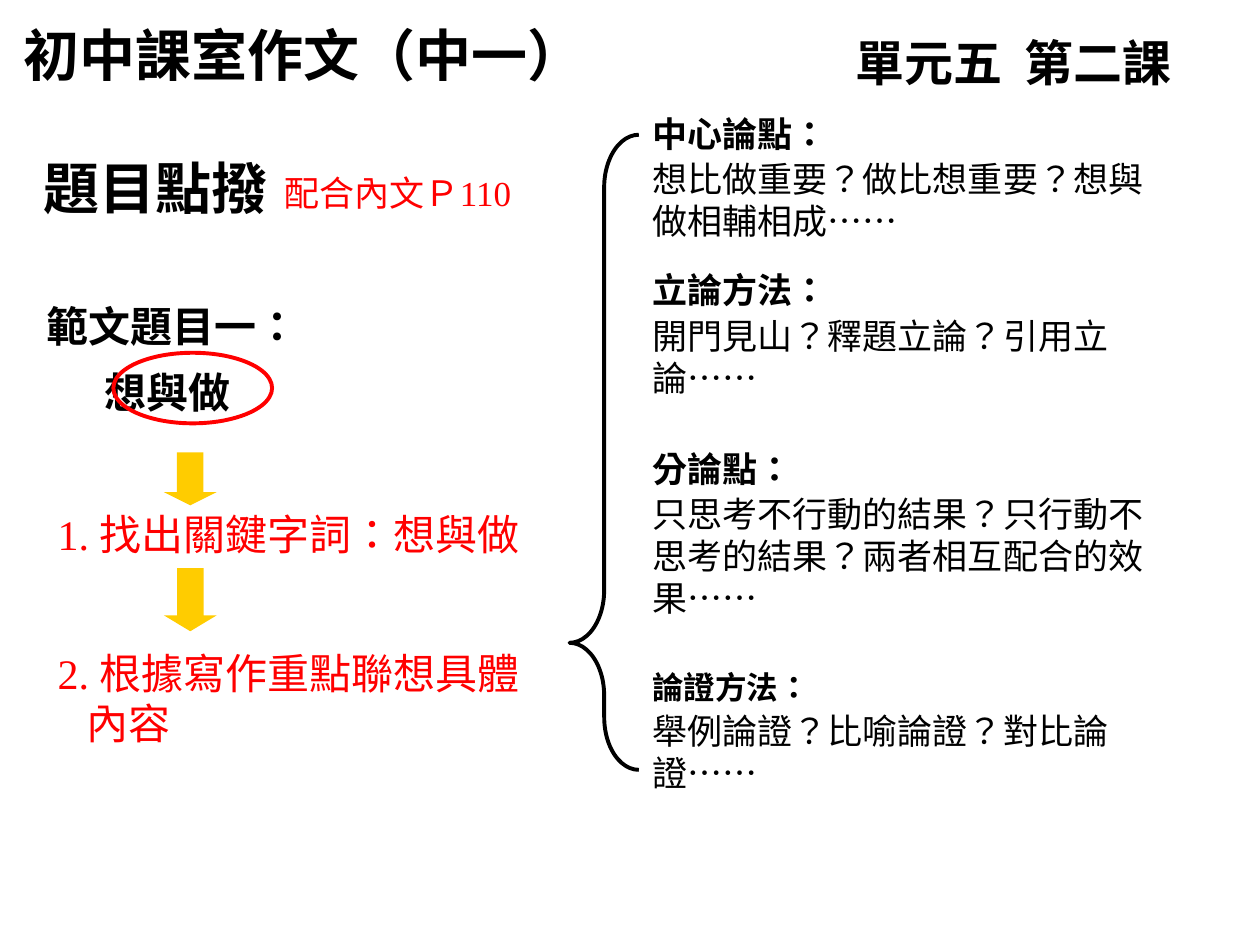
import pptx
import pptx.dml.color
import pptx.enum.lang
import pptx.enum.shapes
import pptx.util

SHAPE = pptx.enum.shapes.MSO_SHAPE
BLACK, RED, GOLD = "000000", "FF0000", "FFCC00"
SANS, SERIF, CJK = "DejaVu Sans", "Times New Roman", "Noto Sans CJK SC"


def color(value):
    return pptx.dml.color.RGBColor.from_string(value)


class Lesson:
    """Draw styled elements on one slide, placed in percent of its size."""

    def __init__(self, prs):
        self.width, self.height = prs.slide_width, prs.slide_height
        self.s = prs.slides.add_slide(prs.slide_layouts[6])

    def place(self, x, y, w, h):
        across, down = self.width / 100, self.height / 100
        return int(x * across), int(y * down), int(w * across), int(h * down)

    def box(self, *area):
        tf = self.s.shapes.add_textbox(*self.place(*area)).text_frame
        tf.word_wrap = True
        return tf

    def paragraph(self, tf, runs, size, ink=BLACK, bold=False, before=0, indent=0, spacing=1.0):
        p = tf.paragraphs[0]
        if p.runs:
            p = tf.add_paragraph()
        p.space_before = pptx.util.Pt(before)
        p.line_spacing = spacing
        if indent:
            p._p.get_or_add_pPr().set("marL", str(pptx.util.Inches(indent)))
        for text, face in runs:
            r = p.add_run()
            r.text = text
            r.font.name, r.font.size, r.font.bold = face, pptx.util.Pt(size), bold
            r.font.color.rgb = color(ink)
            r.font.language_id = pptx.enum.lang.MSO_LANGUAGE_ID.TRADITIONAL_CHINESE

    def label(self, area, text, face, size, ink=BLACK, bold=False):
        self.paragraph(self.box(*area), [(text, face)], size, ink, bold)

    def step(self, area, number, text, rest=None):
        tf = self.box(*area)
        self.paragraph(tf, [(number, SERIF), (text, SANS)], 24, RED)
        if rest:
            self.paragraph(tf, [(rest, SANS)], 24, RED, indent=0.23)

    def shape(self, kind, area, fill=None, line=None, adjust=(), turn=0):
        sp = self.s.shapes.add_shape(kind, *self.place(*area))
        sp.shadow.inherit = False
        sp.rotation = turn
        for i, value in enumerate(adjust):
            sp.adjustments[i] = value
        if fill:
            sp.fill.solid()
            sp.fill.fore_color.rgb = color(fill)
        else:
            sp.fill.background()
        if line:
            sp.line.color.rgb = color(line)
            sp.line.width = pptx.util.Pt(2.25)
        else:
            sp.line.fill.background()

    def outline(self, area, points):
        tf = self.box(*area)
        for heading, face, size, before, body in points:
            self.paragraph(tf, [(heading, face)], size, bold=True, before=before)
            self.paragraph(tf, [(body, SANS), ("……", CJK)], 20, before=2)


def main():
    prs = pptx.Presentation()
    prs.slide_width, prs.slide_height = pptx.util.Inches(10), pptx.util.Inches(7.5)
    s = Lesson(prs)

    s.label((0.9, 1.47, 52.2, 8.4), "初中課室作文（中一）", "Roboto", 32, bold=True)
    s.label((66.9, 2.8, 33.5, 7.6), "單元五  第二課", "Roboto", 28, bold=True)
    s.label((2.5, 15.6, 30.8, 8.4), "題目點撥", "Arial", 32, bold=True)

    topic = s.box(2.7, 29.6, 50, 15.2)
    for text, indent in (("範文題目一：", 0), ("想與做", 0.46)):
        s.paragraph(topic, [(text, SANS)], 24, bold=True, indent=indent, spacing=1.3)
    s.shape(SHAPE.OVAL, (9, 37.33, 12.6, 7.47), line=RED)

    s.shape(SHAPE.DOWN_ARROW, (13, 47.87, 4.2, 5.6), fill=GOLD, adjust=(0.5, 0.25))
    s.step((3.6, 53.2, 43.3, 6.67), "1. ", "找出關鍵字詞：想與做")
    s.shape(SHAPE.RIGHT_ARROW, (12.6, 60.67, 5, 5.6), fill=GOLD, adjust=(0.5, 0.3), turn=90)
    s.step((3.6, 67.87, 41.7, 12), "2. ", "根據寫作重點聯想具體", "內容")

    s.shape(SHAPE.LEFT_BRACE, (45.2, 14.27, 5.5, 67.2), line=BLACK, adjust=(0.76, 0.8))
    s.outline((50.8, 11.2, 42.5, 74.13), [
        ("中心論點：", SANS, 20, 0, "想比做重要？做比想重要？想與做相輔相成"),
        ("立論方法：", SANS, 20, 15.5, "開門見山？釋題立論？引用立論"),
        ("分論點：", SANS, 20, 28, "只思考不行動的結果？只行動不思考的結果？兩者相互配合的效果"),
        ("論證方法：", "Arial", 18, 28, "舉例論證？比喻論證？對比論證"),
    ])
    s.label((21.6, 17.47, 24.7, 5.73), "配合內文Ｐ110", SERIF, 20, RED)

    prs.save("out.pptx")


if __name__ == "__main__":
    main()
